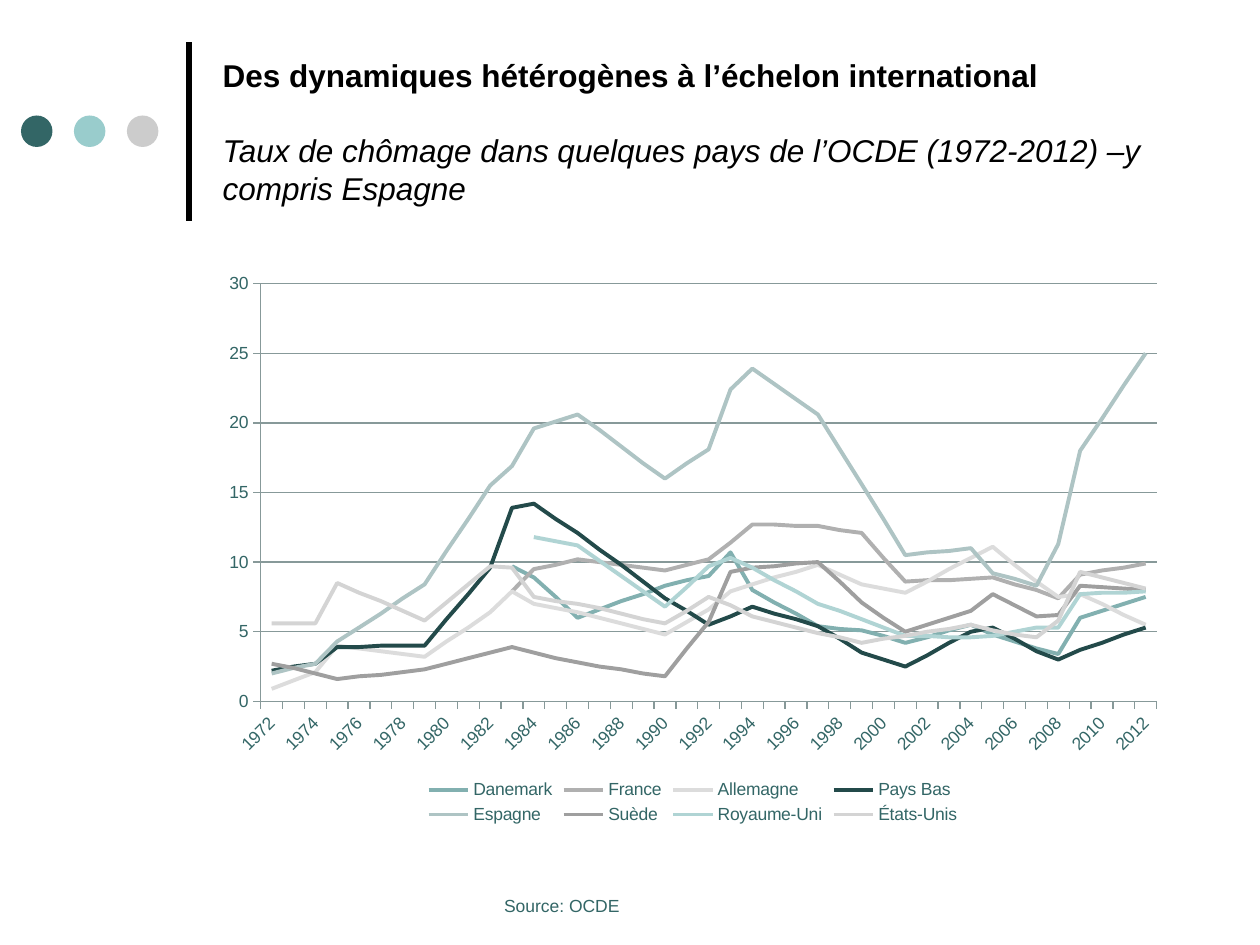
from copy import deepcopy
from dataclasses import dataclass

from lxml import etree
from pptx import Presentation
from pptx.chart.data import CategoryChartData
from pptx.dml.color import RGBColor
from pptx.enum.chart import XL_CHART_TYPE, XL_LEGEND_POSITION, XL_TICK_MARK
from pptx.enum.shapes import MSO_CONNECTOR, MSO_SHAPE
from pptx.enum.text import MSO_ANCHOR, MSO_AUTO_SIZE, PP_ALIGN
from pptx.oxml.ns import qn
from pptx.util import Pt

LINE_CHART = XL_CHART_TYPE.LINE
LEGEND_BOTTOM = XL_LEGEND_POSITION.BOTTOM
TICK_OUTSIDE = XL_TICK_MARK.OUTSIDE
STRAIGHT = MSO_CONNECTOR.STRAIGHT
OVAL = MSO_SHAPE.OVAL
MIDDLE = MSO_ANCHOR.MIDDLE
NO_AUTOFIT = MSO_AUTO_SIZE.NONE
FIT_SHAPE = MSO_AUTO_SIZE.SHAPE_TO_FIT_TEXT
LEFT = PP_ALIGN.LEFT


@dataclass(frozen=True)
class Theme:
    font: str = "Arial"
    title_size: int = 18
    small_size: int = 10
    black: str = "000000"
    teal: str = "336666"
    aqua: str = "99CCCC"
    silver: str = "CCCCCC"
    grid: str = "879999"


THEME = Theme()
TITLE_ONLY_LAYOUT = 5
YEARS = range(1972, 2013)
KEY_YEARS = [1972, 1974, 1975, 1979, 1982, 1983, 1984, 1986, 1990, 1992, 1993,
             1994, 1997, 1999, 2001, 2004, 2005, 2007, 2008, 2009, 2012]

UNEMPLOYMENT = [
    ("Danemark", "82B0B0",
     [9.7, 8.9, 6, 8.3, 9, 10.7, 8, 5.4, 5.1, 4.2, 5.5, 4.8, 3.8, 3.4, 6, 7.5]),
    ("France", "B0B0B0",
     [7.9, 9.5, 10.2, 9.4, 10.2, 11.4, 12.7, 12.6, 12.1, 8.6, 8.8, 8.9, 8, 7.4, 9.1,
      9.9]),
    ("Allemagne", "DCDCDC",
     [0.9, 2.1, 4, 3.2, 6.4, 7.9, 7, 6.4, 4.8, 6.6, 7.9, 8.4, 9.8, 8.4, 7.8, 10.3,
      11.1, 8.6, 7.5, 7.7, 5.5]),
    ("Pays Bas", "234A4A",
     [2.2, 2.7, 3.9, 4, 9.6, 13.9, 14.2, 12.1, 7.4, 5.5, 6.1, 6.8, 5.4, 3.5, 2.5, 5,
      5.3, 3.6, 3, 3.7, 5.3]),
    ("Espagne", "AEC4C4",
     [2, 2.7, 4.3, 8.4, 15.5, 16.9, 19.6, 20.6, 16, 18.1, 22.4, 23.9, 20.6, 15.6,
      10.5, 11, 9.2, 8.3, 11.3, 18, 25]),
    ("Suède", "9F9F9F",
     [2.7, 2, 1.6, 2.3, 3.5, 3.9, 3.5, 2.8, 1.8, 5.7, 9.3, 9.6, 10, 7.1, 5, 6.5, 7.7,
      6.1, 6.2, 8.3, 8]),
    ("Royaume-Uni", "B0D4D4",
     [11.8, 11.2, 6.8, 9.7, 10.3, 9.6, 7, 5.9, 4.7, 4.6, 4.7, 5.3, 5.3, 7.7, 7.9]),
    ("États-Unis", "D4D4D4",
     [5.6, 5.6, 8.5, 5.8, 9.7, 9.6, 7.5, 7, 5.6, 7.5, 6.9, 6.1, 4.9, 4.2, 4.7, 5.5,
      5.1, 4.6, 5.8, 9.3, 8.1]),
]


def yearly_rates(key_rates):
    known = list(zip(KEY_YEARS[-len(key_rates):], key_rates))
    rates = dict(known)
    for (start, first), (end, last) in zip(known, known[1:]):
        for year in range(start + 1, end):
            share = (year - start) / (end - start)
            rates[year] = round(first + (last - first) * share, 1)
    return [rates.get(year) for year in YEARS]


def rgb(color):
    return RGBColor.from_string(color)


def style_font(font, size, color):
    font.name = THEME.font
    font.size = Pt(size)
    font.color.rgb = rgb(color)


def style_line(line, color, width):
    line.color.rgb = rgb(color)
    line.width = Pt(width)


def add_rule(slide, x, start, end):
    rule = slide.shapes.add_connector(STRAIGHT, Pt(x), Pt(start), Pt(x), Pt(end))
    style_line(rule.line, THEME.black, 3)
    etree.SubElement(rule._element.spPr, qn("a:effectLst"))


def add_dot(slide, left, color):
    dot = slide.shapes.add_shape(OVAL, Pt(left), Pt(66), Pt(18), Pt(18))
    dot.shadow.inherit = False
    dot.fill.solid()
    dot.fill.fore_color.rgb = rgb(color)
    dot.line.fill.background()


def fill_title(slide, heading, subtitle):
    title = slide.shapes.title
    title.left, title.top, title.width, title.height = Pt(120), Pt(15), Pt(552), Pt(120)
    frame = title.text_frame
    frame.auto_size = NO_AUTOFIT
    frame.vertical_anchor = MIDDLE
    paragraph = frame.paragraphs[0]
    paragraph.alignment = LEFT

    heading_run = paragraph.add_run()
    heading_run.text = heading
    heading_run.font.bold = True
    paragraph.add_line_break()
    paragraph.add_line_break()
    subtitle_run = paragraph.add_run()
    subtitle_run.text = subtitle
    subtitle_run.font.bold = False
    subtitle_run.font.italic = True
    for part in (paragraph, heading_run, subtitle_run):
        style_font(part.font, THEME.title_size, THEME.black)
    for line_break in paragraph._p.findall(qn("a:br")):
        line_break.append(deepcopy(heading_run._r.rPr))


def add_source(slide, text):
    source = slide.shapes.add_textbox(Pt(281), Pt(508), Pt(81.4), Pt(19.4))
    frame = source.text_frame
    frame.word_wrap = False
    frame.auto_size = FIT_SHAPE
    paragraph = frame.paragraphs[0]
    paragraph.text = text
    style_font(paragraph.font, THEME.small_size, THEME.teal)


def style_axes(chart):
    years, rates = chart.category_axis, chart.value_axis
    for axis in (years, rates):
        axis.major_tick_mark = TICK_OUTSIDE
        style_line(axis.format.line, THEME.grid, 0.75)
        style_font(axis.tick_labels.font, THEME.small_size, THEME.teal)
    rates.minimum_scale, rates.maximum_scale, rates.major_unit = 0, 30, 5
    rates.has_major_gridlines = True
    style_line(rates.major_gridlines.format.line, THEME.grid, 0.75)

    years_xml = years._element
    years_xml.find(qn("c:txPr")).find(qn("a:bodyPr")).set("rot", "-2700000")
    no_multi_level = years_xml.find(qn("c:noMultiLvlLbl"))
    for tag, interval in (("c:tickLblSkip", "2"), ("c:tickMarkSkip", "1")):
        no_multi_level.addprevious(etree.Element(qn(tag), val=interval))


def add_unemployment_chart(slide):
    data = CategoryChartData()
    data.categories = [str(year) for year in YEARS]
    for country, _, key_rates in UNEMPLOYMENT:
        data.add_series(country, yearly_rates(key_rates))
    chart = slide.shapes.add_chart(
        LINE_CHART, Pt(120), Pt(150), Pt(552), Pt(324), data).chart
    chart.has_title = False
    style_font(chart.font, THEME.small_size, THEME.teal)
    chart.has_legend = True
    chart.legend.position = LEGEND_BOTTOM
    chart.legend.include_in_layout = False
    style_axes(chart)
    chart.plots[0].vary_by_categories = False
    for series, (_, color, _) in zip(chart.plots[0].series, UNEMPLOYMENT):
        series.smooth = False
        style_line(series.format.line, color, 2.25)


def main():
    presentation = Presentation()
    presentation.slide_width, presentation.slide_height = Pt(720), Pt(540)
    slide = presentation.slides.add_slide(presentation.slide_layouts[TITLE_ONLY_LAYOUT])
    add_rule(slide, 108, 126, 24)
    for index, color in enumerate((THEME.teal, THEME.aqua, THEME.silver)):
        add_dot(slide, 12 + 30.25 * index, color)
    fill_title(slide, "Des dynamiques hétérogènes à l’échelon international",
               "Taux de chômage dans quelques pays de l’OCDE (1972-2012) –y compris Espagne")
    add_source(slide, "Source: OCDE")
    add_unemployment_chart(slide)
    presentation.save("out.pptx")


if __name__ == "__main__":
    main()
